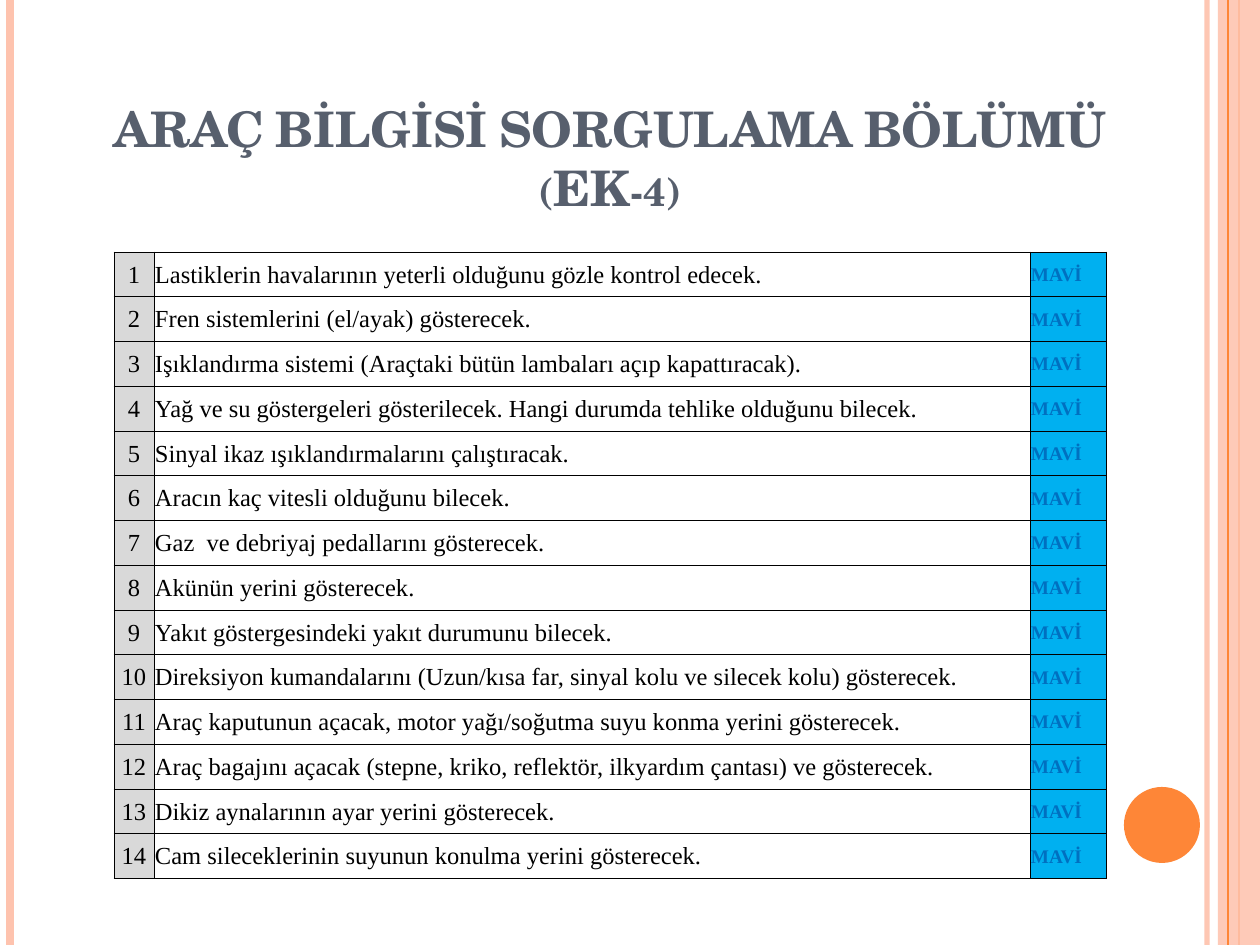
from dataclasses import dataclass

from lxml import etree
from pptx import Presentation
from pptx.dml.color import RGBColor
from pptx.enum.shapes import MSO_CONNECTOR, MSO_SHAPE
from pptx.enum.text import MSO_ANCHOR, PP_ALIGN
from pptx.oxml.ns import qn
from pptx.util import Pt

PX = 914400 // 126
STRAIGHT = MSO_CONNECTOR.STRAIGHT
RECTANGLE, OVAL = MSO_SHAPE.RECTANGLE, MSO_SHAPE.OVAL
MIDDLE, BOTTOM = MSO_ANCHOR.MIDDLE, MSO_ANCHOR.BOTTOM
LEFT, CENTER = PP_ALIGN.LEFT, PP_ALIGN.CENTER


@dataclass(frozen=True)
class Theme:
    title_font: str = "TeX Gyre Schola"
    table_font: str = "Times New Roman"
    title_size: int = 28
    item_size: int = 14
    tag_size: int = 11
    title: str = "575F6D"
    peach: str = "FEC3AE"
    orange: str = "FE8637"
    black: str = "000000"
    white: str = "FFFFFF"
    gray: str = "D9D9D9"
    tag_fill: str = "00B0F0"
    tag_text: str = "0070C0"


theme = Theme()
WIDTH, HEIGHT = 1260, 945
ITEMS = [
    "Lastiklerin havalarının yeterli olduğunu gözle kontrol edecek.",
    "Fren sistemlerini (el/ayak) gösterecek.",
    "Işıklandırma sistemi (Araçtaki bütün lambaları açıp kapattıracak).",
    "Yağ ve su göstergeleri gösterilecek. Hangi durumda tehlike olduğunu bilecek.",
    "Sinyal ikaz ışıklandırmalarını çalıştıracak.",
    "Aracın kaç vitesli olduğunu bilecek.",
    "Gaz  ve debriyaj pedallarını gösterecek.",
    "Akünün yerini gösterecek.",
    "Yakıt göstergesindeki yakıt durumunu bilecek.",
    "Direksiyon kumandalarını (Uzun/kısa far, sinyal kolu ve silecek kolu) gösterecek.",
    "Araç kaputunun açacak, motor yağı/soğutma suyu konma yerini gösterecek.",
    "Araç bagajını açacak (stepne, kriko, reflektör, ilkyardım çantası) ve gösterecek.",
    "Dikiz aynalarının ayar yerini gösterecek.",
    "Cam sileceklerinin suyunun konulma yerini gösterecek.",
]


def set_opacity(fill_owner, percent):
    """Add an alpha value to the solid colour found below an XML element."""
    color = next(fill_owner.iter(qn("a:srgbClr")))
    etree.SubElement(color, qn("a:alpha")).set("val", str(percent * 1000))


def format_run(run, font, size, color, bold=False):
    run.font.name = font
    run.font.size = Pt(size)
    run.font.bold = bold
    run.font.color.rgb = RGBColor.from_string(color)


presentation = Presentation()
presentation.slide_width, presentation.slide_height = WIDTH * PX, HEIGHT * PX
slide = presentation.slides.add_slide(presentation.slide_layouts[5])

# Side bands: x, width in points, colour, opacity
STRIPES = [
    (1207, 3, theme.peach, 93),
    (10, 4.5, theme.peach, 100),
    (1239, 1.5, theme.orange, 100),
    (1228, 0.75, theme.orange, 100),
]
BLOCKS = [
    (RECTANGLE, 1218, 0, 42, HEIGHT, theme.peach, 87),
    (OVAL, 1124, 787, 76, 76, theme.orange, 100),
]
stripes = []
for x, weight, color, opacity in STRIPES:
    stripe = slide.shapes.add_connector(STRAIGHT, x * PX, 0, x * PX, HEIGHT * PX)
    stripe.line.width = Pt(weight)
    stripe.line.color.rgb = RGBColor.from_string(color)
    etree.SubElement(stripe._element.spPr, qn("a:effectLst"))
    if opacity < 100:
        set_opacity(stripe._element.spPr, opacity)
    stripes.append(stripe)

for kind, x, y, width, height, color, opacity in BLOCKS:
    shape = slide.shapes.add_shape(kind, x * PX, y * PX, width * PX, height * PX)
    shape.shadow.inherit = False
    shape.fill.solid()
    shape.fill.fore_color.rgb = RGBColor.from_string(color)
    shape.line.fill.background()
    if opacity < 100:
        set_opacity(shape._element.spPr, opacity)

# The thin orange line lies over the peach band
slide.shapes._spTree.append(stripes[-1]._element)

title = slide.shapes.title
title.left, title.top, title.width, title.height = 35 * PX, 66 * PX, 1150 * PX, 157 * PX
title.text_frame.text = "ARAÇ BİLGİSİ SORGULAMA BÖLÜMÜ (EK-4)"
title.text_frame.word_wrap = True
title.text_frame.vertical_anchor = BOTTOM
paragraph = title.text_frame.paragraphs[0]
paragraph.alignment = CENTER
title_run = paragraph.runs[0]
format_run(title_run, theme.title_font, theme.title_size, theme.title, True)
title_run._r.get_or_add_rPr().set("cap", "small")

# Checklist: width, fill, size, text colour, bold, alignment of each column
COLUMNS = [
    (40, theme.gray, theme.item_size, theme.black, False, CENTER),
    (876, theme.white, theme.item_size, theme.black, False, LEFT),
    (76, theme.tag_fill, theme.tag_size, theme.tag_text, True, LEFT),
]
table_width = sum(column[0] for column in COLUMNS)
table = slide.shapes.add_table(
    len(ITEMS), len(COLUMNS), 114 * PX, 252 * PX, table_width * PX, 627 * PX
).table
table.first_row = table.horz_banding = False
for column, (width, *_) in zip(table.columns, COLUMNS):
    column.width = width * PX

for row, item in enumerate(ITEMS):
    texts = [str(row + 1), item, "MAVİ"]
    for index, (_, fill, size, color, bold, alignment) in enumerate(COLUMNS):
        cell = table.cell(row, index)
        cell.text_frame.text = texts[index]
        cell.vertical_anchor = MIDDLE
        cell.margin_left = cell.margin_right = cell.margin_top = PX
        cell.margin_bottom = 0
        paragraph = cell.text_frame.paragraphs[0]
        paragraph.alignment = alignment
        format_run(paragraph.runs[0], theme.table_font, size, color, bold)
        properties = cell._tc.get_or_add_tcPr()
        for side in ("a:lnL", "a:lnR", "a:lnT", "a:lnB"):
            border = etree.SubElement(properties, qn(side), w=str(Pt(0.5)))
            solid = etree.SubElement(border, qn("a:solidFill"))
            etree.SubElement(solid, qn("a:srgbClr"), val=theme.black)
        cell.fill.solid()
        cell.fill.fore_color.rgb = RGBColor.from_string(fill)

presentation.save("out.pptx")
